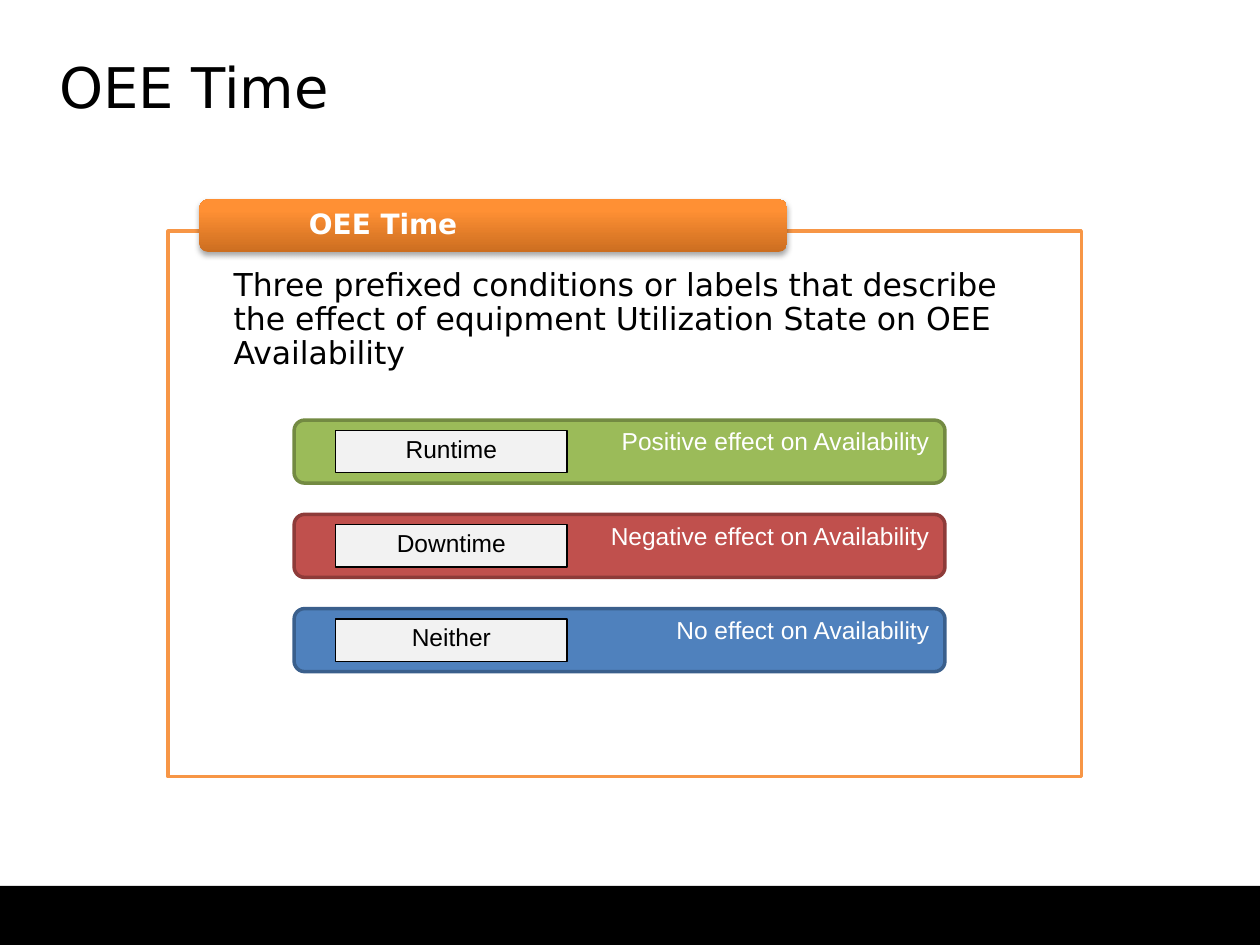
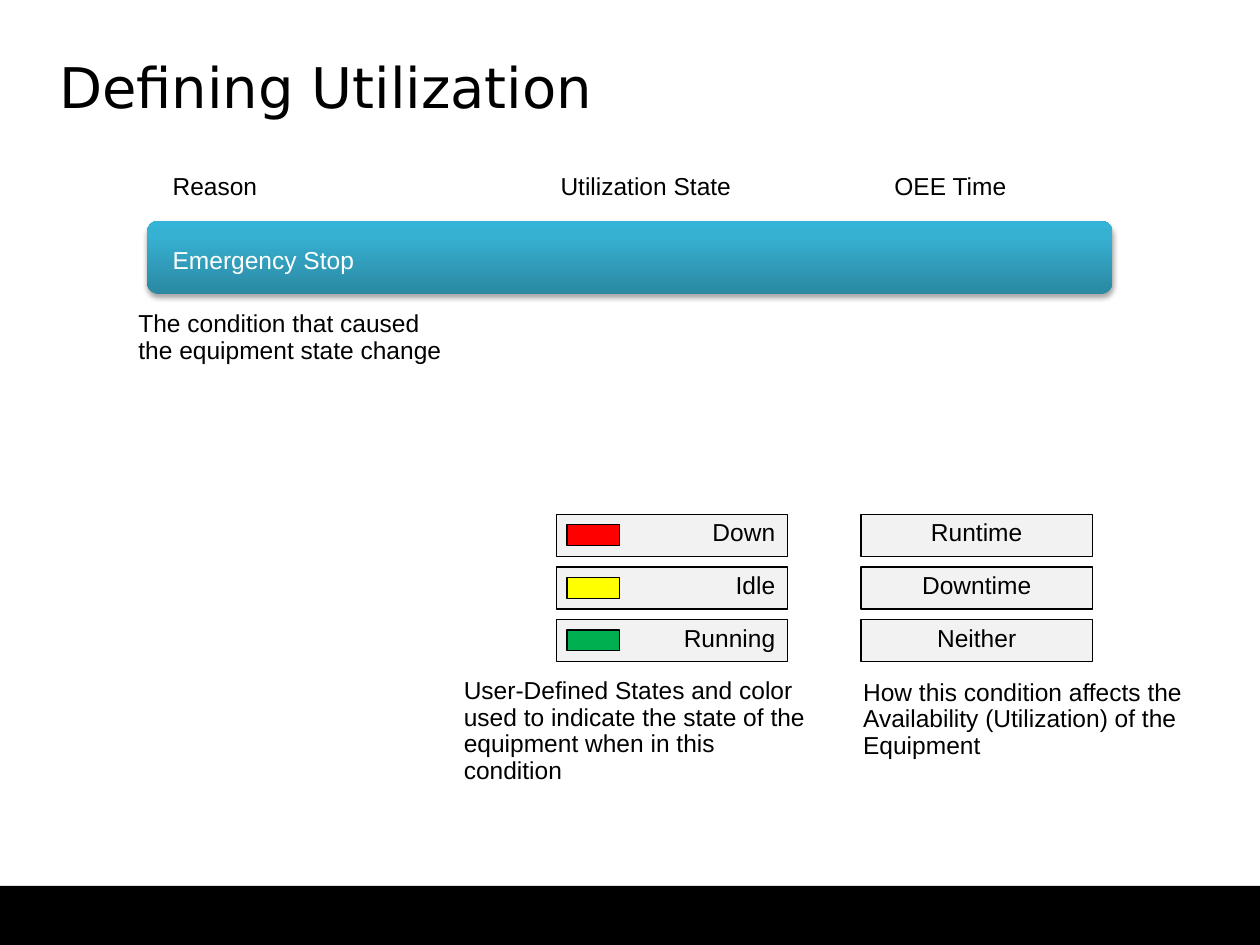
from lxml import etree
from pptx import Presentation
from pptx.dml.color import RGBColor
from pptx.enum.shapes import MSO_SHAPE
from pptx.enum.text import MSO_ANCHOR, MSO_AUTO_SIZE, PP_ALIGN
from pptx.oxml import parse_xml
from pptx.oxml.ns import nsdecls, qn
from pptx.util import Cm, Pt

RECTANGLE, ROUNDED = MSO_SHAPE.RECTANGLE, MSO_SHAPE.ROUNDED_RECTANGLE
TOP, MIDDLE = MSO_ANCHOR.TOP, MSO_ANCHOR.MIDDLE
LEFT, CENTER, RIGHT = PP_ALIGN.LEFT, PP_ALIGN.CENTER, PP_ALIGN.RIGHT
NO_AUTOFIT = MSO_AUTO_SIZE.NONE

BLACK = RGBColor(0x00, 0x00, 0x00)
WHITE = RGBColor(0xFF, 0xFF, 0xFF)
LABEL_GRAY = RGBColor(0xF2, 0xF2, 0xF2)
ORANGE = RGBColor(0xF7, 0x96, 0x46)
GREEN, DARK_GREEN = RGBColor(0x9B, 0xBB, 0x59), RGBColor(0x73, 0x8A, 0x42)
BRICK, DARK_BRICK = RGBColor(0xC0, 0x50, 0x4D), RGBColor(0x8E, 0x3B, 0x39)
BLUE, DARK_BLUE = RGBColor(0x4F, 0x81, 0xBD), RGBColor(0x3A, 0x5F, 0x8C)
DOWN_RED = RGBColor(0xFF, 0x00, 0x00)
IDLE_YELLOW = RGBColor(0xFF, 0xFF, 0x00)
RUNNING_GREEN = RGBColor(0x00, 0xB0, 0x50)
ORANGE_GLOSS = [
    (0, RGBColor(0xCC, 0x6E, 0x20)),
    (80, RGBColor(0xFF, 0x90, 0x34)),
    (100, RGBColor(0xFF, 0x91, 0x36)),
]
TEAL_GLOSS = [
    (0, RGBColor(0x2A, 0x88, 0xA2)),
    (80, RGBColor(0x37, 0xB1, 0xD2)),
    (100, RGBColor(0x34, 0xB4, 0xD6)),
]

BODY_FONT = {"name": "Arial", "size": Pt(14), "bold": False}
DISPLAY_FONT = {"name": "DejaVu Sans", "size": Pt(18), "bold": False}
TITLE_FONT = {**DISPLAY_FONT, "size": Pt(32)}
HEADER_FONT = {**DISPLAY_FONT, "size": Pt(16), "bold": True}
DEFAULT_MARGINS = (0.25, 0.13, 0.25, 0.13)
LABEL_WIDTH, LABEL_HEIGHT = 4.66, 0.85
INSET = 0.21
OEE_TIMES = ("Runtime", "Downtime", "Neither")


class SlideBuilder:
    """Draws styled elements on the current slide; boxes are (left, top, width, height) in cm."""

    def __init__(self):
        self.presentation = Presentation()
        self.presentation.slide_width = Cm(25.4)
        self.presentation.slide_height = Cm(19.05)
        self.slide = None

    def new_slide(self, title):
        layout = self.presentation.slide_layouts.get_by_name("Title Only")
        self.slide = self.presentation.slides.add_slide(layout)
        self.shape((0, 17.86, 25.4, 1.19), BLACK)
        placeholder = self.slide.shapes.title
        for name, value in zip(("left", "top", "width", "height"), (1.19, 1.17, 23.01, 2.51)):
            setattr(placeholder, name, Cm(value))
        self.fill_text(placeholder, title, TITLE_FONT, margins=(0, 0, 0, 0), spacing=Pt(35))

    def fill_text(self, shape, text, font=BODY_FONT, color=BLACK, align=LEFT,
                  margins=DEFAULT_MARGINS, anchor=TOP, spacing=0.9):
        frame = shape.text_frame
        frame.text = text
        frame_format = {"word_wrap": True, "auto_size": NO_AUTOFIT, "vertical_anchor": anchor}
        sides = ("margin_left", "margin_top", "margin_right", "margin_bottom")
        frame_format.update(zip(sides, map(Cm, margins)))
        for name, value in frame_format.items():
            setattr(frame, name, value)
        for paragraph in frame.paragraphs:
            paragraph.alignment = align
            paragraph.line_spacing = spacing
            for name, value in font.items():
                setattr(paragraph.font, name, value)
            paragraph.font.color.rgb = color

    def text(self, box, text, **style):
        shape = self.slide.shapes.add_textbox(*map(Cm, box))
        self.fill_text(shape, text, **style)

    def shape(self, box, fill, line=None, line_width=0.75, kind=RECTANGLE):
        shape = self.slide.shapes.add_shape(kind, *map(Cm, box))
        shape.shadow.inherit = False
        shape.fill.solid()
        shape.fill.fore_color.rgb = fill
        if line is None:
            shape.line.fill.background()
        else:
            shape.line.color.rgb = line
            shape.line.width = Pt(line_width)
        return shape

    def glossy_bar(self, box, stops):
        """Add a rounded bar with a vertical gradient and a soft drop shadow."""
        bar = self.shape(box, stops[0][1], kind=ROUNDED)
        bar.fill.gradient()
        bar.fill.gradient_angle = 90
        properties = bar.element.spPr
        stop_list = properties.find(".//" + qn("a:gsLst"))
        for stop in list(stop_list):
            stop_list.remove(stop)
        for percent, color in stops:
            stop = etree.SubElement(stop_list, qn("a:gs"), pos=str(percent * 1000))
            etree.SubElement(stop, qn("a:srgbClr"), val=str(color))
        properties.find(qn("a:effectLst")).append(parse_xml(
            f'<a:outerShdw {nsdecls("a")} blurRad="40000" dist="23000" dir="5400000" '
            'rotWithShape="0"><a:srgbClr val="000000"><a:alpha val="35000"/>'
            '</a:srgbClr></a:outerShdw>'))

    def label(self, left, top, text, align=CENTER):
        shape = self.shape((left, top, LABEL_WIDTH, LABEL_HEIGHT), LABEL_GRAY, BLACK)
        self.fill_text(shape, text, align=align)


def add_oee_time_slide(builder):
    builder.new_slide("OEE Time")
    panel = builder.shape((3.39, 4.66, 18.41, 11), WHITE, ORANGE, 2)
    builder.fill_text(
        panel,
        "Three prefixed conditions or labels that describe the effect of "
        "equipment Utilization State on OEE Availability",
        font=DISPLAY_FONT, margins=(1.32, 0.76, 1.32, 0.25))
    builder.glossy_bar((4.02, 4.02, 11.85, 1.06), ORANGE_GLOSS)
    builder.text((5.77, 4.06, 11.76, 0.97), "OEE Time", font=HEADER_FONT, color=WHITE,
                 margins=(0.46, 0, 0.46, 0), anchor=MIDDLE)

    effects = [
        ("Positive effect on Availability", GREEN, DARK_GREEN),
        ("Negative effect on Availability", BRICK, DARK_BRICK),
        ("No effect on Availability", BLUE, DARK_BLUE),
    ]
    for row, (time, (effect, fill, line)) in enumerate(zip(OEE_TIMES, effects)):
        top = 8.47 + row * 1.9
        bar = builder.shape((5.93, top, 13.12, 1.27), fill, line, 2, ROUNDED)
        builder.fill_text(bar, effect, color=WHITE, align=RIGHT)
        builder.label(6.77, top + INSET, time)


def add_utilization_slide(builder):
    builder.new_slide("Defining Utilization")
    builder.glossy_bar((2.96, 4.45, 19.47, 1.48), TEAL_GLOSS)
    headings = [(3.23, 2.3, "Reason"), (11.05, 4.05, "Utilization State"),
                (17.78, 2.9, "OEE Time")]
    for left, width, heading in headings:
        builder.text((left, 3.39, width, 0.79), heading)
    builder.text((3.23, 4.87, 4.3, 0.79), "Emergency Stop", color=WHITE)

    states = [("Down", DOWN_RED), ("Idle", IDLE_YELLOW), ("Running", RUNNING_GREEN)]
    for row, ((state, color), time) in enumerate(zip(states, OEE_TIMES)):
        top = 10.37 + row * 1.06
        builder.label(11.22, top, state, RIGHT)
        builder.shape((11.22 + INSET, top + INSET, 1.06, 0.42), color, BLACK)
        builder.label(17.36, top, time)

    captions = [
        ((2.54, 6.15, 6.75, 1.35),
         "The condition that caused\nthe equipment state change"),
        ((9.1, 13.55, 7.67, 1.88),
         "User-Defined States and color\nused to indicate the state of the\n"
         "equipment when in this condition"),
        ((17.15, 13.58, 7.05, 1.88),
         "How this condition affects the\nAvailability (Utilization) of the\nEquipment"),
    ]
    for box, caption in captions:
        builder.text(box, caption)


def main():
    builder = SlideBuilder()
    add_oee_time_slide(builder)
    add_utilization_slide(builder)
    builder.presentation.save("out.pptx")


if __name__ == "__main__":
    main()
